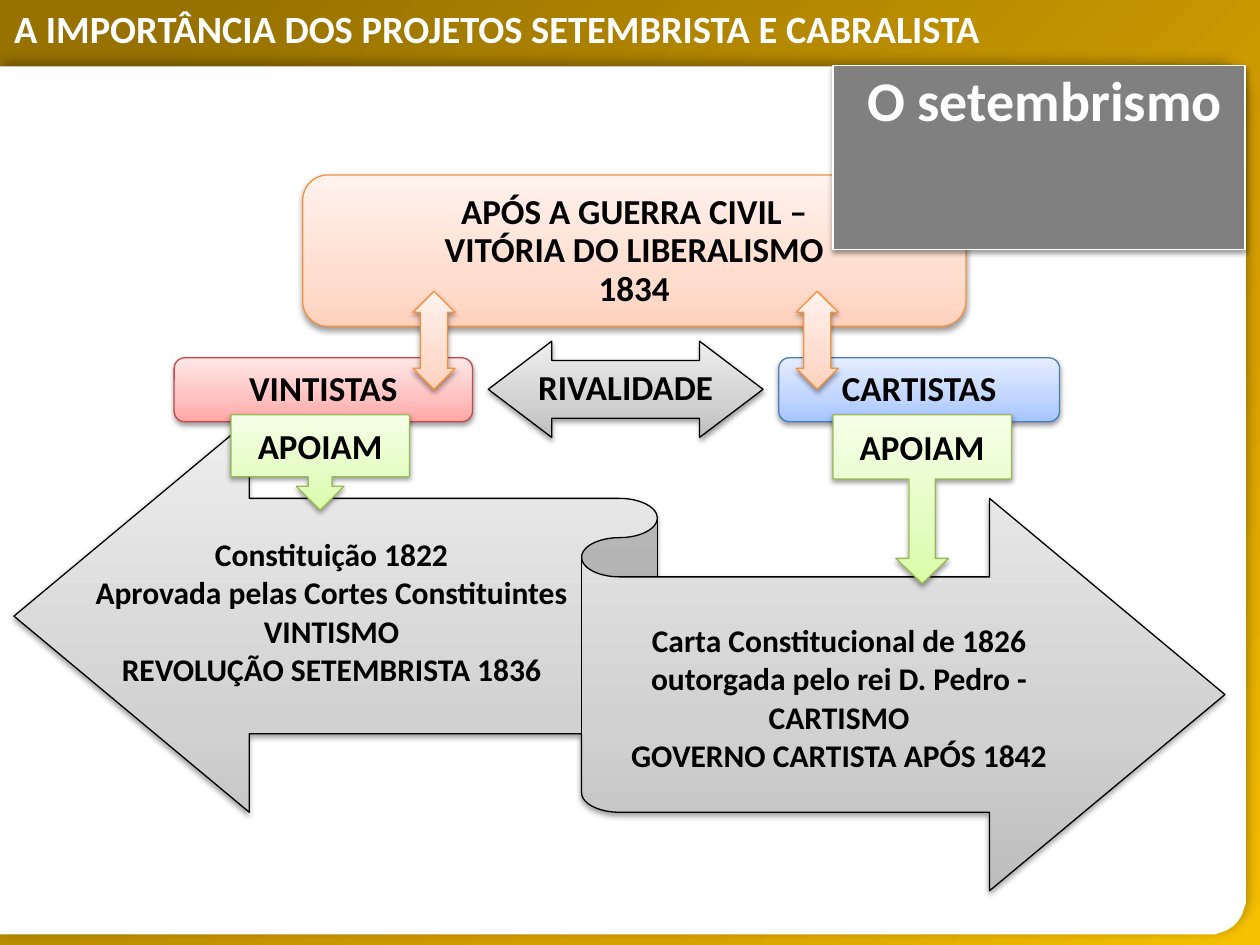
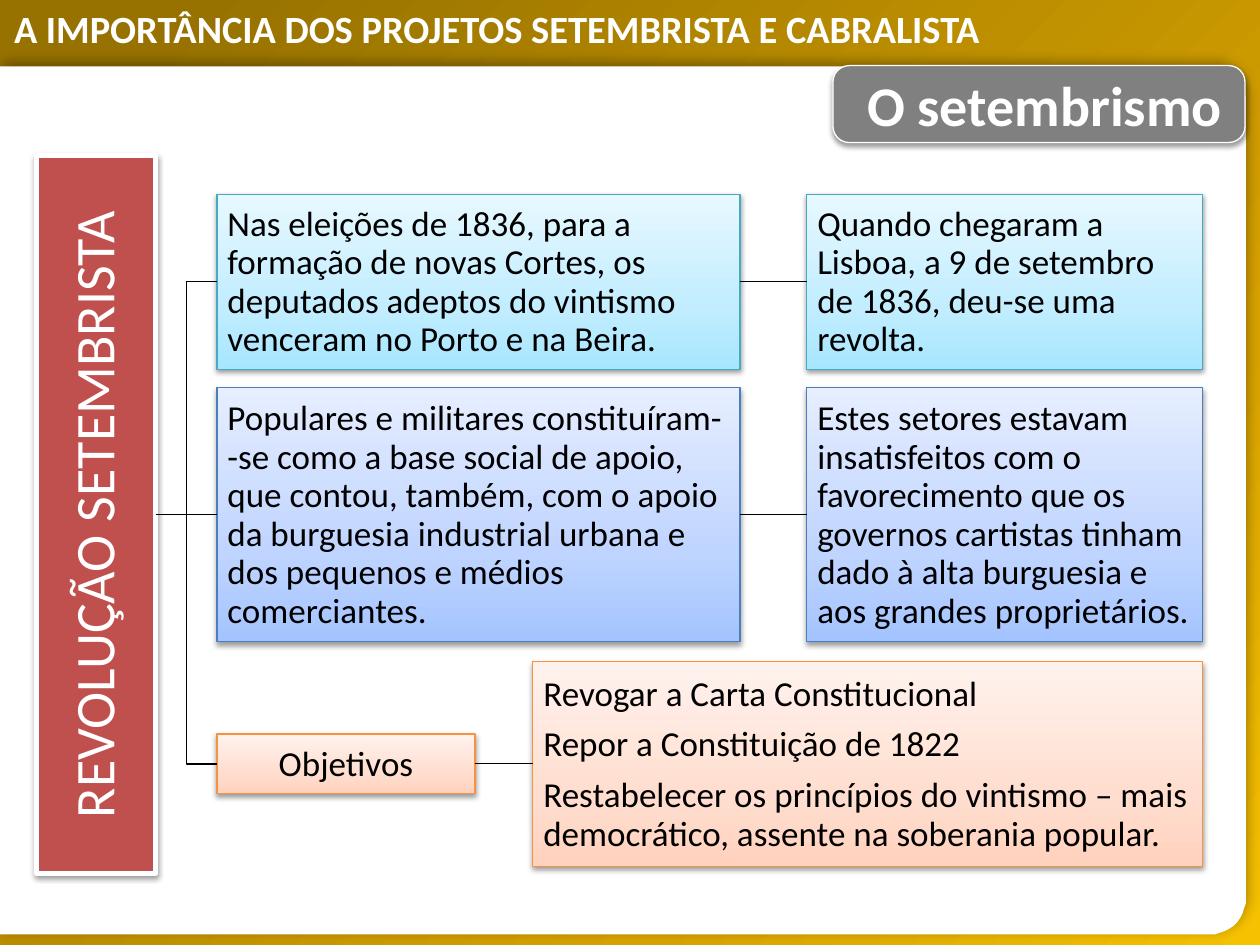
from math import cos, radians, sin

from lxml.etree import SubElement
from pptx import Presentation
from pptx.dml.color import RGBColor
from pptx.enum.shapes import MSO_CONNECTOR as CONN, MSO_SHAPE as SHAPE
from pptx.enum.text import MSO_ANCHOR as ANCHOR, PP_ALIGN as ALIGN
from pptx.oxml.ns import qn
from pptx.util import Pt

FONT = "Calibri"
WIDTH, HEIGHT = 720, 540
COLORS = {"white": "FFFFFF", "black": "000000", "gray": "808080", "red": "C0504D"}
# name: (gradient stops, angle, outline)
GRADIENTS = {
    "gold": ([(9, "977200"), (72, "D7A200"), (100, "F6C100")], 45, None),
    "silver": ([(0, "BDBDBD"), (35, "D1D1D1"), (100, "EEEEEE")], 270, "000000"),
    "orange": ([(0, "FFD2BD"), (35, "FFDED0"), (100, "FFF2ED")], 270, "F69240"),
    "blue": ([(0, "A4C4FF"), (35, "BFD4FF"), (100, "E6EEFF")], 270, "4B7EBC"),
    "pink": ([(0, "FFA6A5"), (35, "FFC0BF"), (100, "FFE7E7")], 270, "BF4C48"),
    "green": ([(0, "DAFDA7"), (35, "E4FCC2"), (100, "F5FFE7")], 270, "98B955"),
    "aqua": ([(0, "A7E6FF"), (35, "C1EDFF"), (100, "E7F8FF")], 270, "46AAC5"),
}
# opacity %, blur, distance, direction
SOFT_SHADOW = (38, 3.1, 1.6, 90)
PANEL_SHADOW = (30, 7, 3, 315)

BAND_TITLE = "A IMPORTÂNCIA DOS PROJETOS SETEMBRISTA E CABRALISTA"
TOPIC = "O setembrismo"
PANEL_TOP, PANEL_RIGHT, PANEL_BOTTOM, PANEL_RADIUS = 37.5, 711.5, 533.5, 18
TOPIC_WIDTH = 235.5

WAR_END = ["APÓS A GUERRA CIVIL –\nVITÓRIA DO LIBERALISMO\n1834"]
# text, gradient, left, width
FACTIONS = [
    ("VINTISTAS", "pink", 99.5, 170.5),
    ("CARTISTAS", "blue", 445, 160.5),
]
# paragraphs, box, spacing after each paragraph
RIBBON_TEXTS = [
    (["Constituição 1822\nAprovada pelas Cortes Constituintes VINTISMO\n"
      "REVOLUÇÃO SETEMBRISTA 1836"], (30, 298, 319, 103), 6.3),
    (["Carta Constitucional de 1826\noutorgada pelo rei D. Pedro -", "CARTISMO",
      "GOVERNO CARTISTA APÓS 1842"], (343.5, 347, 272, 103), 0),
]
# left, height, adjustments
SUPPORTS = [
    (476, 96.5, (0.156, 0.156, 0.149, 0.381)),
    (132, 54.5, (0.25, 0.25, 0.25, 0.65)),
]

REVOLUTION = "REVOLUÇÃO SETEMBRISTA"
COL_LEFT, COL_RIGHT = (124, 299), (461, 226)
# gradient, top, height, left text, right text
EVENT_ROWS = [
    ("aqua", 111, 100,
     "Nas eleições de 1836, para a formação de novas Cortes, os deputados adeptos "
     "do vintismo venceram no Porto e na Beira.",
     "Quando chegaram a Lisboa, a 9 de setembro de 1836, deu-se uma revolta."),
    ("blue", 221.5, 145,
     "Populares e militares constituíram-\n-se como a base social de apoio, que contou, "
     "também, com o apoio da burguesia industrial urbana e dos pequenos e médios comerciantes.",
     "Estes setores estavam insatisfeitos com o favorecimento que os governos cartistas "
     "tinham dado à alta burguesia e aos grandes proprietários."),
]
GOALS_LABEL = "Objetivos"
GOALS = [
    "Revogar a Carta Constitucional",
    "Repor a Constituição de 1822",
    "Restabelecer os princípios do vintismo – mais democrático, assente na soberania popular.",
]


def rgb(name):
    return RGBColor.from_string(COLORS.get(name, name))


def paint(sp, fill, line=None, weight=0.75, shadow=SOFT_SHADOW):
    """Set fill (colour or gradient name), outline and shadow."""
    sp.fill.solid()
    if fill in GRADIENTS:
        stops, angle, line = GRADIENTS[fill]
        solid = sp.element.spPr.find(qn("a:solidFill"))
        grad = solid.makeelement(qn("a:gradFill"), {"rotWithShape": "1"})
        stop_list = SubElement(grad, qn("a:gsLst"))
        for pos, color in stops:
            gs = SubElement(stop_list, qn("a:gs"), pos=str(pos * 1000))
            SubElement(gs, qn("a:srgbClr"), val=color)
        SubElement(grad, qn("a:lin"), ang=str(angle * 60000), scaled="0")
        sp.element.spPr.replace(solid, grad)
    else:
        sp.fill.fore_color.rgb = rgb(fill)
    if line:
        sp.line.color.rgb = rgb(line)
        sp.line.width = Pt(weight)
    else:
        sp.line.fill.background()
    sp.shadow.inherit = False
    if shadow:
        opacity, blur, dist, direction = shadow
        effects = sp.element.spPr.find(qn("a:effectLst"))
        outer = SubElement(effects, qn("a:outerShdw"), blurRad=str(Pt(blur)), dist=str(Pt(dist)),
                           dir=str(direction * 60000), rotWithShape="0")
        color = SubElement(outer, qn("a:srgbClr"), val=COLORS["black"])
        SubElement(color, qn("a:alpha"), val=str(opacity * 1000))


def write(sp, paragraphs, size=20, color="black", bold=False, align=ALIGN.CENTER,
          anchor=ANCHOR.MIDDLE, insets=(6, 6, 6, 6), spacing=Pt(22), after=7):
    tf = sp.text_frame
    tf.word_wrap = True
    tf.vertical_anchor = anchor
    tf.margin_left, tf.margin_top, tf.margin_right, tf.margin_bottom = map(Pt, insets)
    for i, text in enumerate(paragraphs):
        p = tf.add_paragraph() if i else tf.paragraphs[0]
        p.alignment, p.line_spacing, p.space_after = align, spacing, Pt(after)
        for j, part in enumerate(text.split("\n")):
            if j:
                p.add_line_break()
            r = p.add_run()
            r.text = part
            r.font.name, r.font.size, r.font.bold = FONT, Pt(size), bold
            r.font.color.rgb = rgb(color)


def add_shape(s, kind, box, fill, adjust=(), **style):
    sp = s.shapes.add_shape(kind, *map(Pt, box))
    for i, value in enumerate(adjust):
        sp.adjustments[i] = value
    paint(sp, fill, **style)
    return sp


def join(s, kind, start, end):
    """Connect the right side of start to the left side of end."""
    line = s.shapes.add_connector(kind, 0, 0, 0, 0)
    line.begin_connect(start, 3)
    line.end_connect(end, 1)
    line.line.color.rgb = rgb("black")
    line.line.width = Pt(0.75)
    SubElement(line.element.spPr, qn("a:effectLst"))


def add_frame(s):
    """Gold background, white panel and band title."""
    add_shape(s, SHAPE.RECTANGLE, (0, 0, WIDTH, HEIGHT), "gold", shadow=None)
    x = PANEL_RIGHT - PANEL_RADIUS
    corners = [(PANEL_TOP + PANEL_RADIUS, -90), (PANEL_BOTTOM - PANEL_RADIUS, 0)]
    points = [(x + PANEL_RADIUS * cos(radians(a)), y + PANEL_RADIUS * sin(radians(a)))
              for y, first in corners for a in range(first, first + 91, 10)]
    outline = s.shapes.build_freeform(0, PANEL_TOP, scale=Pt(1))
    outline.add_line_segments(points + [(0, PANEL_BOTTOM)])
    paint(outline.convert_to_shape(), "white", shadow=PANEL_SHADOW)
    title = s.shapes.add_textbox(*map(Pt, (1, 10, 664, 25)))
    write(title, [BAND_TITLE], 22, "white", True, ALIGN.LEFT, ANCHOR.TOP,
          (7.2, 3.6, 7.2, 3.6), Pt(16), 0)


def add_topic(s, kind, height, adjust=()):
    box = (PANEL_RIGHT - TOPIC_WIDTH, PANEL_TOP, TOPIC_WIDTH, height)
    sp = add_shape(s, kind, box, "gray", adjust, line="white")
    write(sp, [TOPIC], 32, "white", True, anchor=ANCHOR.TOP, insets=(6.5, 0, 0, 0),
          spacing=1.0, after=0)


def build_rivalry(s):
    add_shape(s, SHAPE.LEFT_RIGHT_RIBBON, (8, 240, 692, 269), "silver")
    for paragraphs, box, after in RIBBON_TEXTS:
        write(s.shapes.add_textbox(*map(Pt, box)), paragraphs, 18, bold=True,
              insets=(0, 6.5, 0, 7), after=after)

    war = add_shape(s, SHAPE.ROUNDED_RECTANGLE, (173, 100, 379, 86.5), "orange")
    write(war, WAR_END, bold=True)
    for text, fill, left, width in FACTIONS:
        sp = add_shape(s, SHAPE.ROUNDED_RECTANGLE, (left, 204.5, width, 36.5), fill)
        write(sp, [text], bold=True, spacing=0.9)
    rivalry = add_shape(s, SHAPE.LEFT_RIGHT_ARROW, (279, 195, 157, 55), "silver", (0.6, 0.66))
    write(rivalry, ["RIVALIDADE"], bold=True, insets=(0, 0, 0, 0), spacing=0.9)
    for center in (248, 467):
        add_shape(s, SHAPE.UP_DOWN_ARROW, (center - 12, 166.5, 24, 56), "orange", (0.6, 0.64))

    for left, height, adjust in SUPPORTS:
        sp = add_shape(s, SHAPE.DOWN_ARROW_CALLOUT, (left, 237, 102, height), "green", adjust)
        write(sp, ["APOIAM"], bold=True, insets=(7.2, 3.6, 7.2, 3.6), spacing=1.0, after=0)
    add_topic(s, SHAPE.RECTANGLE, 105)


def build_revolution(s):
    root = add_shape(s, SHAPE.RECTANGLE, (21, 89, 68, 410), "red", line="white", weight=3)
    write(root, [REVOLUTION], 32, "white", insets=(1.5, 1.5, 1.5, 1.5), spacing=0.9, after=11)
    root.element.txBody.find(qn("a:bodyPr")).set("vert", "vert270")

    def add_box(box, fill, paragraphs, align=ALIGN.LEFT):
        sp = add_shape(s, SHAPE.RECTANGLE, box, fill)
        write(sp, paragraphs, align=align)
        return sp

    branches = []
    for fill, top, height, *texts in EVENT_ROWS:
        branches.append([add_box((left, top, width, height), fill, [text])
                         for (left, width), text in zip((COL_LEFT, COL_RIGHT), texts)])
    branches.append([
        add_box((COL_LEFT[0], 419.5, 147.5, 34), "orange", [GOALS_LABEL], ALIGN.CENTER),
        add_box((304.5, 378, 382.5, 117), "orange", GOALS),
    ])
    for near, far in branches:
        level = near.top + near.height // 2 == root.top + root.height // 2
        join(s, CONN.STRAIGHT if level else CONN.ELBOW, root, near)
        join(s, CONN.STRAIGHT, near, far)
    add_topic(s, SHAPE.ROUNDED_RECTANGLE, 44, (0.212,))


def main():
    prs = Presentation()
    prs.slide_width, prs.slide_height = Pt(WIDTH), Pt(HEIGHT)
    for build in (build_rivalry, build_revolution):
        s = prs.slides.add_slide(prs.slide_layouts[6])
        add_frame(s)
        build(s)
    prs.save("out.pptx")


if __name__ == "__main__":
    main()
